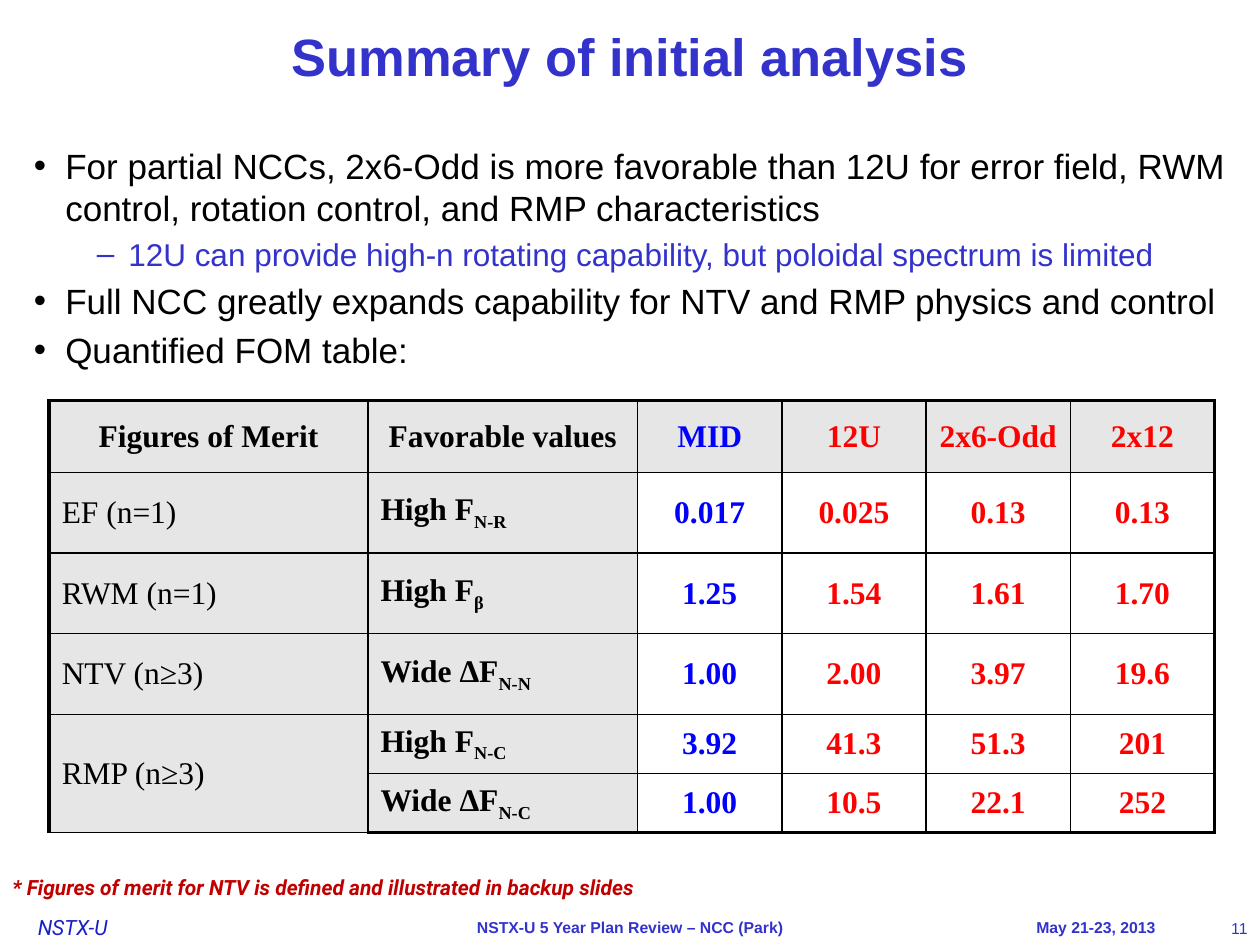
import pptx
import pptx.dml.color
import pptx.enum.text
import pptx.oxml
import pptx.oxml.ns
import pptx.util

ALIGN = pptx.enum.text.PP_ALIGN
ANCHOR = pptx.enum.text.MSO_ANCHOR
UNIT = pptx.util.Inches(0.1)
BLUE, BLACK, RED, DARK_RED = "3333CC", "000000", "FF0000", "C00000"
VALUE_BLUE, GREY, WHITE = "0000FF", "E6E6E6", "FFFFFF"

BULLETS = [
    (0, "For partial NCCs, 2x6-Odd is more favorable than 12U for error field, "
        "RWM control, rotation control, and RMP characteristics"),
    (1, "12U can provide high-n rotating capability, but poloidal spectrum is limited"),
    (0, "Full NCC greatly expands capability for NTV and RMP physics and control"),
    (0, "Quantified FOM table:"),
]
LEVELS = [("•", 0.25, 20, BLACK), ("–", 0.75, 18, BLUE)]

COLUMNS = [25.3, 21.4] + [11.45] * 4
ROWS = [5.7] + [6.4] * 3 + [4.7] * 2
MERITS = [
    ["Figures of Merit", "Favorable values", "MID", "12U", "2x6-Odd", "2x12"],
    ["EF (n=1)", "High F_N-R", "0.017", "0.025", "0.13", "0.13"],
    ["RWM (n=1)", "High F_β", "1.25", "1.54", "1.61", "1.70"],
    ["NTV (n≥3)", "Wide ΔF_N-N", "1.00", "2.00", "3.97", "19.6"],
    ["RMP (n≥3)", "High F_N-C", "3.92", "41.3", "51.3", "201"],
    ["", "Wide ΔF_N-C", "1.00", "10.5", "22.1", "252"],
]


def color(value):
    """Turn a hex string into a colour."""
    return pptx.dml.color.RGBColor.from_string(value)


def grid(*counts):
    """Turn counts of grid units, 100 by 75 on the slide, into lengths."""
    return [int(count * UNIT) for count in counts]


def set_font(paragraph, name, size, hex_color, bold=False, italic=False):
    """Set the font that all runs of a paragraph share."""
    font = paragraph.font
    font.name, font.size = name, pptx.util.Pt(size)
    font.bold, font.italic = bold, italic
    font.color.rgb = color(hex_color)


def add_frame(slide, place, anchor=ANCHOR.TOP, inset=True, wrap=True):
    """Add a text box and return its text frame."""
    frame = slide.shapes.add_textbox(*grid(*place)).text_frame
    frame.word_wrap, frame.vertical_anchor = wrap, anchor
    if not inset:
        frame.margin_left = frame.margin_right = 0
        frame.margin_top = frame.margin_bottom = 0
    return frame


def add_label(slide, place, text, font, align=ALIGN.LEFT, **options):
    """Add a box with one paragraph."""
    paragraph = add_frame(slide, place, **options).paragraphs[0]
    paragraph.text, paragraph.alignment = text, align
    set_font(paragraph, *font)
    return paragraph


def add_xml(parent, tag, **attributes):
    """Append a drawing element and return it."""
    element = pptx.oxml.parse_xml(f"<a:{tag} {pptx.oxml.ns.nsdecls('a')}/>")
    for key, value in attributes.items():
        element.set(key, value)
    parent.append(element)
    return element


def add_bullets(slide, place):
    """Add the bulleted findings."""
    frame = add_frame(slide, place)
    for index, (level, text) in enumerate(BULLETS):
        paragraph = frame.add_paragraph() if index else frame.paragraphs[0]
        mark, margin, size, hex_color = LEVELS[level]
        paragraph.text, paragraph.level = text, level
        properties = paragraph._p.get_or_add_pPr()
        properties.set("marL", str(pptx.util.Inches(margin)))
        properties.set("indent", str(-pptx.util.Inches(0.25)))
        add_xml(properties, "buFont", typeface="Arial")
        add_xml(properties, "buChar", char=mark)
        if index:
            paragraph.space_before = pptx.util.Pt(size * 0.2)
        set_font(paragraph, "Arial", size, hex_color)


def set_borders(cell, row, column):
    """Draw thin inner borders and thick outer ones."""
    outer = {"lnL": column == 0, "lnR": column == len(COLUMNS) - 1,
             "lnT": row == 0, "lnB": row == len(ROWS) - 1}
    for tag, thick in outer.items():
        width = pptx.util.Pt(2.25 if thick else 1)
        line = add_xml(cell._tc.get_or_add_tcPr(), tag, w=str(width))
        add_xml(add_xml(line, "solidFill"), "srgbClr", val=BLACK)


def fill_cell(cell, row, column, text):
    """Write and style one table cell; an underscore starts a subscript."""
    set_borders(cell, row, column)
    cell.fill.solid()
    cell.fill.fore_color.rgb = color(GREY if row == 0 or column < 2 else WHITE)
    cell.vertical_anchor = ANCHOR.MIDDLE
    paragraph = cell.text_frame.paragraphs[0]
    base, _, subscript = text.partition("_")
    paragraph.text = base
    if subscript:
        run = paragraph.add_run()
        run.text = subscript
        run._r.get_or_add_rPr().set("baseline", "-25000")
    paragraph.alignment = ALIGN.CENTER if row == 0 or column > 1 else ALIGN.LEFT
    hex_color = BLACK if column < 2 else VALUE_BLUE if column == 2 else RED
    set_font(paragraph, "Times New Roman", 18, hex_color, row == 0 or column > 0)


def add_merit_table(slide, left, top):
    """Add the table of figures of merit."""
    place = grid(left, top, sum(COLUMNS), sum(ROWS))
    table = slide.shapes.add_table(len(ROWS), len(COLUMNS), *place).table
    for column, width in zip(table.columns, grid(*COLUMNS)):
        column.width = width
    for row, height in zip(table.rows, grid(*ROWS)):
        row.height = height
    for row, texts in enumerate(MERITS):
        for column, text in enumerate(texts):
            fill_cell(table.cell(row, column), row, column, text)
    table.cell(4, 0).merge(table.cell(5, 0))


def add_footer(slide):
    """Add the footer labels and the page number."""
    bold = ("Arial", 9, BLUE, True)
    add_label(slide, (22.5, 72.3, 55, 2.5), "NSTX-U 5 Year Plan Review – NCC (Park)",
              bold, ALIGN.CENTER, anchor=ANCHOR.MIDDLE, inset=False)
    add_label(slide, (70, 72.3, 21.7, 2.5), "May 21-23, 2013",
              bold, ALIGN.RIGHT, anchor=ANCHOR.MIDDLE, inset=False)
    add_label(slide, (3, 72.6, 8.7, 2), "NSTX-U",
              ("Roboto", 12, "171FC7", False, True), inset=False)
    add_label(slide, (91.7, 72.8, 8.3, 1.7), "11", ("Arial", 9, BLUE),
              ALIGN.RIGHT, anchor=ANCHOR.MIDDLE)


def main():
    """Build and save the slide."""
    presentation = pptx.Presentation()
    presentation.slide_width, presentation.slide_height = grid(100, 75)
    slide = presentation.slides.add_slide(presentation.slide_layouts[6])
    add_footer(slide)
    title = add_label(slide, (0, 0.1, 100, 9.2), "Summary of initial analysis",
                      ("Arial", 30, BLUE, True), ALIGN.CENTER, anchor=ANCHOR.MIDDLE)
    title.line_spacing = 0.9
    add_bullets(slide, (1.7, 11, 96.7, 60))
    add_merit_table(slide, 3.9, 31.8)
    add_label(slide, (0, 68.9, 56.8, 3),
              "* Figures of merit for NTV is defined and illustrated in backup slides",
              ("Roboto", 12, DARK_RED, True, True), wrap=False)
    presentation.save("out.pptx")


if __name__ == "__main__":
    main()
